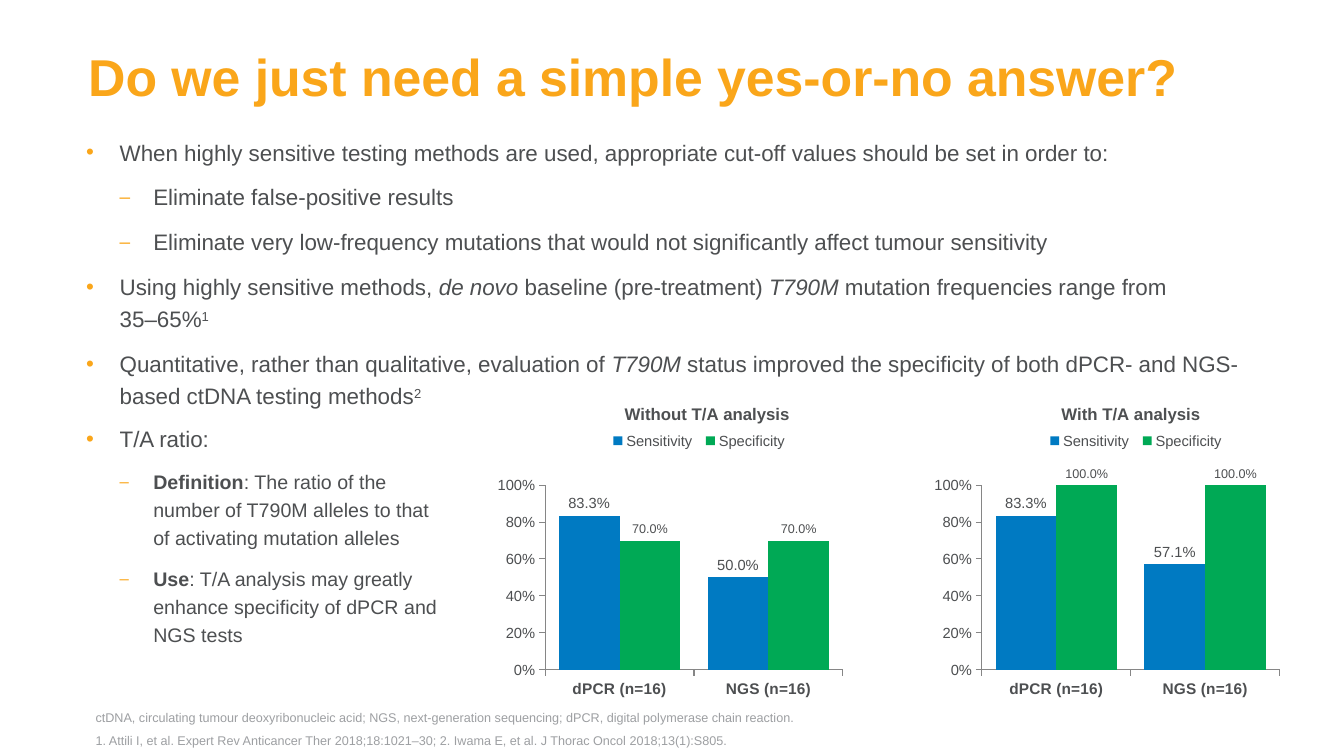
from lxml import etree
from pptx import Presentation
from pptx.chart.data import CategoryChartData
from pptx.dml.color import RGBColor
from pptx.enum.chart import XL_CHART_TYPE, XL_LABEL_POSITION, XL_LEGEND_POSITION, XL_TICK_MARK
from pptx.enum.text import MSO_ANCHOR
from pptx.oxml.ns import qn
from pptx.util import Pt

PX = 9525
FONT = "Arial"
GOLD = RGBColor(0xFA, 0xA6, 0x1A)
DARK = RGBColor(0x4D, 0x4F, 0x51)
PALE = RGBColor(0x9D, 0x9F, 0xA2)
RULE = RGBColor(0x86, 0x86, 0x86)
BLUE = RGBColor(0x00, 0x7A, 0xC2)
GREEN = RGBColor(0x00, 0xA9, 0x55)
COLUMN = XL_CHART_TYPE.COLUMN_CLUSTERED
BOTTOM = XL_LEGEND_POSITION.BOTTOM
OUTER = XL_LABEL_POSITION.OUTSIDE_END
OUT, NONE = XL_TICK_MARK.OUTSIDE, XL_TICK_MARK.NONE
TOP, MIDDLE = MSO_ANCHOR.TOP, MSO_ANCHOR.MIDDLE
BULLETS = {"•": (32, -32, 100), "–": (64, -32, 85)}

deck = Presentation()
deck.slide_width, deck.slide_height = 1280 * PX, 720 * PX
slide = deck.slides.add_slide(deck.slide_layouts[6])


def put(text, box, size, color, sub=16, bold=False, anchor=TOP, pad=(0, 0), line=1.2, before=3, after=6):
    frame = slide.shapes.add_textbox(*[n * PX for n in box]).text_frame
    frame.word_wrap = True
    frame.vertical_anchor = anchor
    frame.margin_left = frame.margin_right = pad[0] * PX
    frame.margin_top = frame.margin_bottom = pad[1] * PX
    for i, row in enumerate(text):
        para = frame.paragraphs[0] if i == 0 else frame.add_paragraph()
        para.line_spacing = line
        para.space_before, para.space_after = Pt(before), Pt(after)
        mark = row[0] if row[0] in BULLETS else ""
        if mark:
            row = row[2:]
            left, hang, scale = BULLETS[mark]
            props = para._p.get_or_add_pPr()
            props.set("marL", str(left * PX))
            props.set("indent", str(hang * PX))
            tint = etree.SubElement(props, qn("a:buClr"))
            etree.SubElement(tint, qn("a:srgbClr")).set("val", str(GOLD))
            etree.SubElement(props, qn("a:buSzPct")).set("val", str(scale * 1000))
            etree.SubElement(props, qn("a:buFont")).set("typeface", FONT)
            etree.SubElement(props, qn("a:buChar")).set("char", mark)
        if mark == "–":
            para.level = 1
        for j, part in enumerate(row.split("|")):
            style = part[0] if j % 2 else ""
            if style == "n":
                para.add_line_break()
                continue
            run = para.add_run()
            run.text = part[1:] if style else part
            run.font.name = FONT
            run.font.size = Pt(sub if mark == "–" else size)
            run.font.color.rgb = color
            run.font.bold = bold or style == "b"
            run.font.italic = style == "i"
            if style == "s":
                run.font._element.set("baseline", "30000")


def place(node, spot, spots, target=""):
    old = node.find(qn("c:layout"))
    if old is not None:
        node.remove(old)
    layout = etree.Element(qn("c:layout"))
    manual = etree.SubElement(layout, qn("c:manualLayout"))
    if target:
        etree.SubElement(manual, qn("c:layoutTarget")).set("val", target)
    for key in ("xMode", "yMode"):
        etree.SubElement(manual, qn("c:" + key)).set("val", "edge")
    for key, value in zip("xywh", spots):
        etree.SubElement(manual, qn("c:" + key)).set("val", str(value))
    node.insert(spot, layout)


put([
    "• When highly sensitive testing methods are used, appropriate cut-off values should be set in order to:",
    "– Eliminate false-positive results",
    "– Eliminate very low-frequency mutations that would not significantly affect tumour sensitivity",
    "• Using highly sensitive methods, |ide novo |baseline (pre-treatment) |iT790M"
    "| mutation frequencies range from |n|35–65%|s1",
    "• Quantitative, rather than qualitative, evaluation of |iT790M"
    "| status improved the specificity of both dPCR- and NGS-based ctDNA testing methods|s2",
], (82, 127, 1116, 274), 16, DARK)
put(["Do we just need a simple yes-or-no answer?"], (84, 38, 1116, 82), 37, GOLD,
    bold=True, anchor=MIDDLE, line=0.75, before=0, after=0)
put([
    "• T/A ratio:",
    "– |bDefinition|: The ratio of the number of T790M alleles to that of activating mutation alleles",
    "– |bUse|: T/A analysis may greatly enhance specificity of dPCR and NGS tests",
], (82, 400, 341, 316), 16, DARK, sub=14)
put([
    "ctDNA, circulating tumour deoxyribonucleic acid; NGS, next-generation sequencing; "
    "dPCR, digital polymerase chain reaction.",
    "1. Attili I, et al. Expert Rev Anticancer Ther 2018;18:1021–30; "
    "2. Iwama E, et al. J Thorac Oncol 2018;13(1):S805.",
], (81, 671, 1145, 47), 9, PALE, pad=(10, 5), line=1.0, before=0)

CHARTS = [
    ("With T/A analysis", 880, (0.833, 0.571), (1, 1)),
    ("Without T/A analysis", 464, (0.833, 0.5), (0.7, 0.7)),
]
for name, left, sens, spec_vals in CHARTS:
    data = CategoryChartData()
    data.categories = ["dPCR (n=16)", "NGS (n=16)"]
    data.add_series("Sensitivity", sens)
    data.add_series("Specificity", spec_vals)
    chart = slide.shapes.add_chart(COLUMN, left * PX, 370 * PX, 400 * PX, 302 * PX, data).chart
    chart.font.name = FONT
    chart.font.size = Pt(18)
    chart.font.color.rgb = DARK

    title = chart.chart_title
    title.text_frame.text = name
    font = title.text_frame.paragraphs[0].runs[0].font
    font.name, font.size, font.bold = FONT, Pt(12), True
    font.color.rgb = DARK
    place(title._element, 1, (0.32, 0.04))

    chart.has_legend = True
    chart.legend.position = BOTTOM
    chart.legend.include_in_layout = False
    chart.legend.font.size = Pt(10.5)
    chart.legend.font.color.rgb = DARK
    place(chart.legend._element, 1, (0.28, 0.12, 0.45, 0.09))
    place(chart._chartSpace.chart.plotArea, 0, (0.138, 0.305, 0.709, 0.582), "inner")

    cat, val = chart.category_axis, chart.value_axis
    for axis, size in ((cat, 11), (val, 10.5)):
        axis.has_major_gridlines = False
        axis.major_tick_mark, axis.minor_tick_mark = OUT, NONE
        axis.format.line.color.rgb = RULE
        axis.tick_labels.font.size = Pt(size)
        axis.tick_labels.font.color.rgb = DARK
    cat.tick_labels.font.bold = True
    val.minimum_scale, val.maximum_scale, val.major_unit = 0, 1, 0.2
    val.tick_labels.number_format = "0%"
    val.tick_labels.number_format_is_linked = False

    plot = chart.plots[0]
    plot.vary_by_categories = False
    plot.gap_width, plot.overlap = 45, 0
    for bars, color, size in zip(plot.series, (BLUE, GREEN), (10.5, 9)):
        bars.format.fill.solid()
        bars.format.fill.fore_color.rgb = color
        tags = bars.data_labels
        tags.show_value = True
        tags.position = OUTER
        tags.number_format = "0.0%"
        tags.number_format_is_linked = False
        tags.font.size = Pt(size)
        tags.font.color.rgb = DARK

deck.save("out.pptx")
